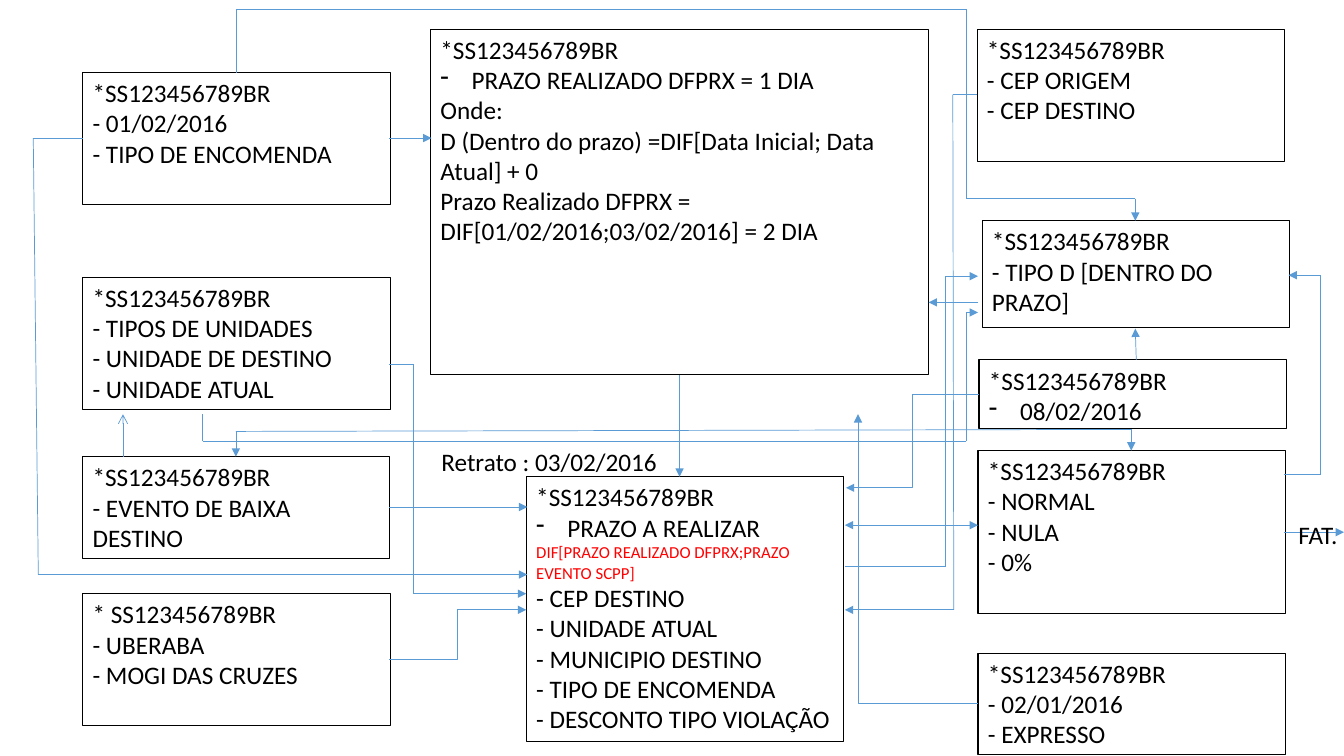
from dataclasses import dataclass
from itertools import pairwise

from lxml.etree import SubElement
from pptx import Presentation
from pptx.dml.color import RGBColor
from pptx.enum.shapes import MSO_CONNECTOR, MSO_SHAPE
from pptx.enum.text import MSO_ANCHOR, MSO_AUTO_SIZE, PP_ALIGN
from pptx.oxml.ns import qn
from pptx.util import Pt

PX = 9144
PAGE_SIZE = (1333, 750)
BULLET_INDENT = 31
CODE = "*SS123456789BR"


@dataclass(frozen=True)
class Theme:
    font: str = "Calibri"
    ink: RGBColor = RGBColor(0, 0, 0)
    accent: RGBColor = RGBColor(0xFF, 0, 0)
    flow: RGBColor = RGBColor(0x5B, 0x9B, 0xD5)
    body: float = 18
    small: float = 12
    border: float = 0.75
    stroke: float = 0.5


THEME = Theme()

BOXES = [
    ((82, 72, 305, 131), [CODE, "- 01/02/2016", "- TIPO DE ENCOMENDA"]),
    ((969, 29, 305, 131), [CODE, "- CEP ORIGEM", "- CEP DESTINO"]),
    ((82, 589, 305, 131), ["* SS123456789BR", "- UBERABA", "- MOGI DAS CRUZES"]),
    ((970, 648, 305, 101), [CODE, "- 02/01/2016", "- EXPRESSO"]),
    ((974, 219, 305, 106), [CODE, "- TIPO D [DENTRO DO PRAZO]"]),
    ((427, 29, 494, 343), [
        CODE,
        ("bullet", "PRAZO REALIZADO DFPRX = 1 DIA"),
        "Onde:",
        "D (Dentro do prazo) =DIF[Data Inicial; Data Atual] + 0",
        "Prazo Realizado DFPRX = DIF[01/02/2016;03/02/2016] = 2 DIA",
    ]),
    ((522, 473, 315, 263), [
        CODE,
        ("bullet", "PRAZO A REALIZAR"),
        ("formula", "DIF[PRAZO REALIZADO DFPRX;PRAZO EVENTO SCPP]"),
        "- CEP DESTINO",
        "- UNIDADE ATUAL",
        "- MUNICIPIO DESTINO",
        "- TIPO DE ENCOMENDA",
        "- DESCONTO TIPO VIOLAÇÃO",
    ]),
    ((82, 453, 304, 101), [CODE, "- EVENTO DE BAIXA DESTINO"]),
    ((970, 447, 305, 162), [CODE, "- NORMAL", "- NULA", "- 0%"]),
    ((971, 357, 305, 68), [CODE, ("bullet", "08/02/2016")]),
    ((82, 275, 305, 131),
     [CODE, "- TIPOS DE UNIDADES", "- UNIDADE DE DESTINO", "- UNIDADE ATUAL"]),
]

CAPTIONS = [
    ((428, 438, 270, 40), ["Retrato : 03/02/2016"]),
    ((1278, 510, 72, 40), ["FAT."]),
]

ROUTES = [
    ([(386, 137), (428, 137)], None, "triangle"),
    ([(970, 300), (921, 300)], None, "triangle"),
    ([(674, 372), (674, 473)], None, "triangle"),
    ([(386, 503), (523, 503)], None, "triangle"),
    ([(969, 94), (945, 94), (946, 605), (838, 605)], None, "triangle"),
    ([(82, 137), (33, 137), (38, 570), (523, 570)], None, "triangle"),
    ([(838, 521), (970, 521)], "triangle", "triangle"),
    ([(234, 453), (234, 428), (1122, 426), (1122, 447)], "triangle", "triangle"),
    ([(1274, 528), (1333, 528)], None, "triangle"),
    ([(386, 361), (410, 361), (410, 589), (522, 589)], None, "triangle"),
    ([(234, 72), (234, 9), (958, 9), (958, 197), (1126, 197), (1126, 219)],
     None, "triangle"),
    ([(1127, 357), (1126, 326)], None, "triangle"),
    ([(1274, 471), (1310, 471), (1310, 273), (1278, 273)], None, "triangle"),
    ([(201, 411), (201, 438), (958, 438), (958, 310), (970, 310)], None, "triangle"),
    ([(838, 562), (938, 562), (938, 274), (970, 274)], None, "triangle"),
    ([(122, 453), (122, 411)], None, "arrow"),
]

ELBOWS = [
    ((970, 698), (851, 411), "bentConnector2"),
    ((386, 654), (522, 605), "bentConnector3"),
    ((971, 391), (839, 484), "bentConnector3"),
]


def emu(lengths):
    return [length * PX for length in lengths]


def add_bullet(para):
    properties = para._p.get_or_add_pPr()
    properties.set("marL", str(BULLET_INDENT * PX))
    properties.set("indent", str(-BULLET_INDENT * PX))
    SubElement(properties, qn("a:buFontTx"))
    SubElement(properties, qn("a:buChar")).set("char", "-")


def write_lines(box, lines):
    frame = box.text_frame
    frame.word_wrap = True
    frame.auto_size = MSO_AUTO_SIZE.SHAPE_TO_FIT_TEXT
    frame.vertical_anchor = MSO_ANCHOR.TOP
    entries = [("plain", line) if isinstance(line, str) else line for line in lines]
    frame.text = "\n".join(text for _, text in entries)
    for para, (style, _) in zip(frame.paragraphs, entries):
        para.alignment = PP_ALIGN.LEFT
        if style == "bullet":
            add_bullet(para)
        formula = style == "formula"
        for span in para.runs:
            span.font.name = THEME.font
            span.font.size = Pt(THEME.small if formula else THEME.body)
            span.font.color.rgb = THEME.accent if formula else THEME.ink


def add_box(page, bounds, lines):
    box = page.shapes.add_shape(MSO_SHAPE.RECTANGLE, *emu(bounds))
    box.shadow.inherit = False
    box.fill.background()
    box.line.color.rgb = THEME.ink
    box.line.width = Pt(THEME.border)
    write_lines(box, lines)


def add_link(page, kind, start, end, head=None, tail=None):
    link = page.shapes.add_connector(kind, *emu(start + end))
    link.line.color.rgb = THEME.flow
    link.line.width = Pt(THEME.stroke)
    outline = link.line._get_or_add_ln()
    for tag, arrow in (("a:headEnd", head), ("a:tailEnd", tail)):
        if arrow:
            SubElement(outline, qn(tag)).set("type", arrow)
    SubElement(link._element.spPr, qn("a:effectLst"))
    return link


def add_route(page, points, head, tail):
    segments = list(pairwise(points))
    last = len(segments) - 1
    for index, (start, end) in enumerate(segments):
        add_link(page, MSO_CONNECTOR.STRAIGHT, start, end,
                 head if index == 0 else None, tail if index == last else None)


def main():
    deck = Presentation()
    deck.slide_width, deck.slide_height = emu(PAGE_SIZE)
    page = deck.slides.add_slide(deck.slide_layouts[6])
    for bounds, lines in BOXES:
        add_box(page, bounds, lines)
    for route in ROUTES:
        add_route(page, *route)
    for start, end, preset in ELBOWS:
        elbow = add_link(page, MSO_CONNECTOR.ELBOW, start, end, tail="triangle")
        elbow._element.spPr.find(qn("a:prstGeom")).set("prst", preset)
    for bounds, lines in CAPTIONS:
        write_lines(page.shapes.add_textbox(*emu(bounds)), lines)
    deck.save("out.pptx")


if __name__ == "__main__":
    main()
